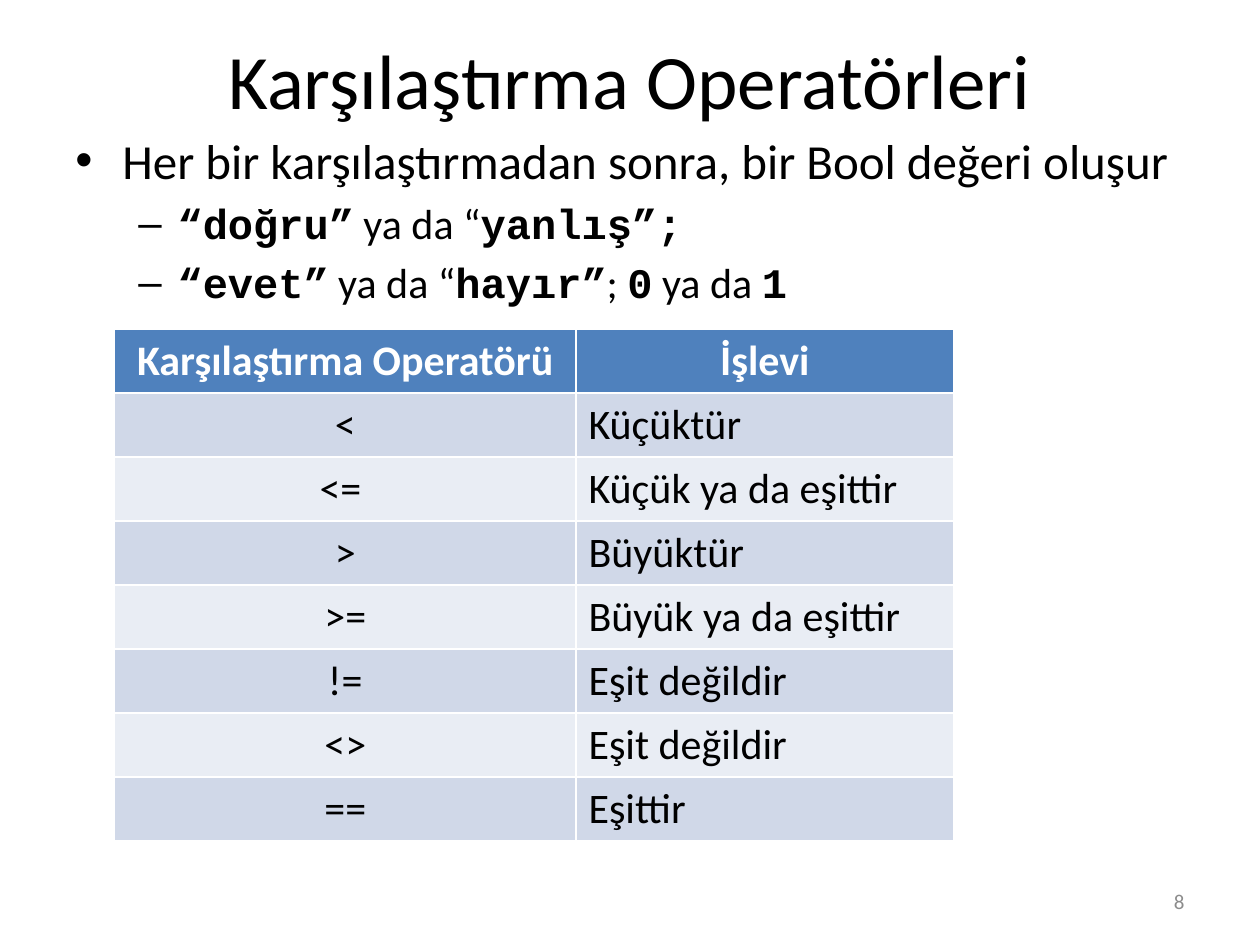
from lxml.etree import SubElement
from pptx import Presentation
from pptx.dml.color import RGBColor
from pptx.enum.text import MSO_ANCHOR, PP_ALIGN
from pptx.oxml.ns import qn
from pptx.util import Cm, Pt

BLACK = RGBColor(0x00, 0x00, 0x00)
WHITE = RGBColor(0xFF, 0xFF, 0xFF)
GRAY = RGBColor(0x8C, 0x8C, 0x8C)
HEADER_BLUE = RGBColor(0x4F, 0x81, 0xBD)
BAND_DARK = RGBColor(0xD0, 0xD8, 0xE8)
BAND_LIGHT = RGBColor(0xE9, 0xED, 0xF4)

TEXT_FONT = "Calibri"
CODE_FONT = "Courier New"

# Each bullet is a level and its runs of (text, is_code).
BULLETS = [
    (0, [("Her bir karşılaştırmadan sonra, bir Bool değeri oluşur", False)]),
    (1, [("“doğru”", True), (" ya da “", False), ("yanlış”;", True)]),
    (1, [("“evet”", True), (" ya da “", False), ("hayır”", True), ("; ", False),
         ("0", True), (" ya da ", False), ("1", True)]),
]
# Per level: bullet sign, left margin, hanging indent, text size.
LEVELS = [("•", Cm(0.95), Cm(0.95), 28), ("–", Cm(2.06), Cm(0.79), 24)]

OPERATORS = [
    ("Karşılaştırma Operatörü", "İşlevi"),
    ("<", "Küçüktür"),
    ("<= ", "Küçük ya da eşittir"),
    (">", "Büyüktür"),
    (">=", "Büyük ya da eşittir"),
    ("!=", "Eşit değildir"),
    ("<>", "Eşit değildir"),
    ("==", "Eşittir"),
]
COLUMN_WIDTHS = [Cm(9.3), Cm(7.62)]
ROW_HEIGHT = Cm(1.29)


def style_paragraph(paragraph, size, color, alignment=PP_ALIGN.LEFT, bold=False):
    paragraph.alignment = alignment
    paragraph.font.name = TEXT_FONT
    paragraph.font.size = Pt(size)
    paragraph.font.color.rgb = color
    paragraph.font.bold = bold


def add_text_frame(slide, left, top, width, height, anchor):
    text_frame = slide.shapes.add_textbox(left, top, width, height).text_frame
    text_frame.word_wrap = True
    text_frame.vertical_anchor = anchor
    return text_frame


def add_label(slide, text, left, top, width, height, size, color, alignment):
    text_frame = add_text_frame(slide, left, top, width, height, MSO_ANCHOR.MIDDLE)
    text_frame.text = text
    style_paragraph(text_frame.paragraphs[0], size, color, alignment)


def set_bullet(paragraph, sign, margin, hanging):
    properties = paragraph._p.get_or_add_pPr()
    properties.set("marL", str(margin))
    properties.set("indent", str(-hanging))
    SubElement(properties, qn("a:buFont"), typeface="Arial")
    SubElement(properties, qn("a:buChar"), char=sign)


def add_bullets(slide):
    text_frame = add_text_frame(slide, Cm(1.27), Cm(2.51), Cm(22.86), Cm(4.78),
                                MSO_ANCHOR.TOP)
    for index, (level, runs) in enumerate(BULLETS):
        paragraph = text_frame.add_paragraph() if index else text_frame.paragraphs[0]
        sign, margin, hanging, size = LEVELS[level]
        paragraph.level = level
        set_bullet(paragraph, sign, margin, hanging)
        paragraph.space_before = Pt(size * 0.2)
        paragraph.alignment = PP_ALIGN.LEFT
        paragraph.font.size = Pt(size)
        paragraph.font.color.rgb = BLACK
        for text, is_code in runs:
            run = paragraph.add_run()
            run.text = text
            run.font.name = CODE_FONT if is_code else TEXT_FONT
            run.font.bold = is_code


def add_operator_table(slide):
    table = slide.shapes.add_table(
        len(OPERATORS), len(COLUMN_WIDTHS), Cm(2.31), Cm(6.63),
        sum(COLUMN_WIDTHS), ROW_HEIGHT * len(OPERATORS)).table
    for column, width in zip(table.columns, COLUMN_WIDTHS):
        column.width = width
    for row, texts in enumerate(OPERATORS):
        is_header = row == 0
        band = BAND_DARK if row % 2 else BAND_LIGHT
        for column, text in enumerate(texts):
            cell = table.cell(row, column)
            cell.text = text
            cell.fill.solid()
            cell.fill.fore_color.rgb = HEADER_BLUE if is_header else band
            centered = is_header or column == 0
            style_paragraph(cell.text_frame.paragraphs[0], 24,
                            WHITE if is_header else BLACK,
                            PP_ALIGN.CENTER if centered else PP_ALIGN.LEFT,
                            is_header)


def main():
    presentation = Presentation()
    presentation.slide_width = Cm(25.4)
    presentation.slide_height = Cm(19.05)
    slide = presentation.slides.add_slide(presentation.slide_layouts[6])
    add_label(slide, "Karşılaştırma Operatörleri", Cm(1.27), Cm(0), Cm(22.86), Cm(3.18),
              44, BLACK, PP_ALIGN.CENTER)
    add_bullets(slide)
    add_operator_table(slide)
    add_label(slide, "8", Cm(18.2), Cm(17.66), Cm(5.93), Cm(1.01),
              12, GRAY, PP_ALIGN.RIGHT)
    presentation.save("out.pptx")


if __name__ == "__main__":
    main()
